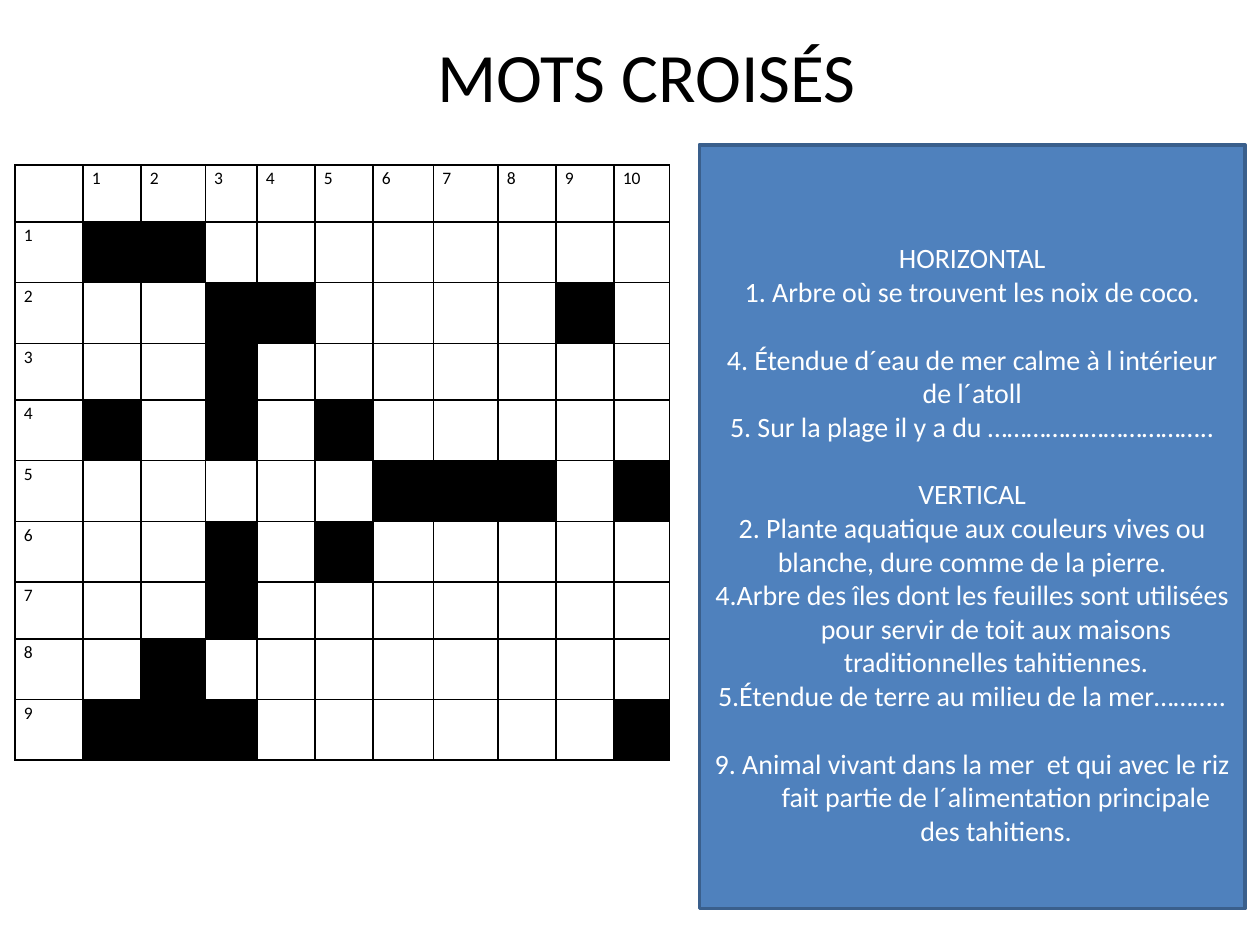
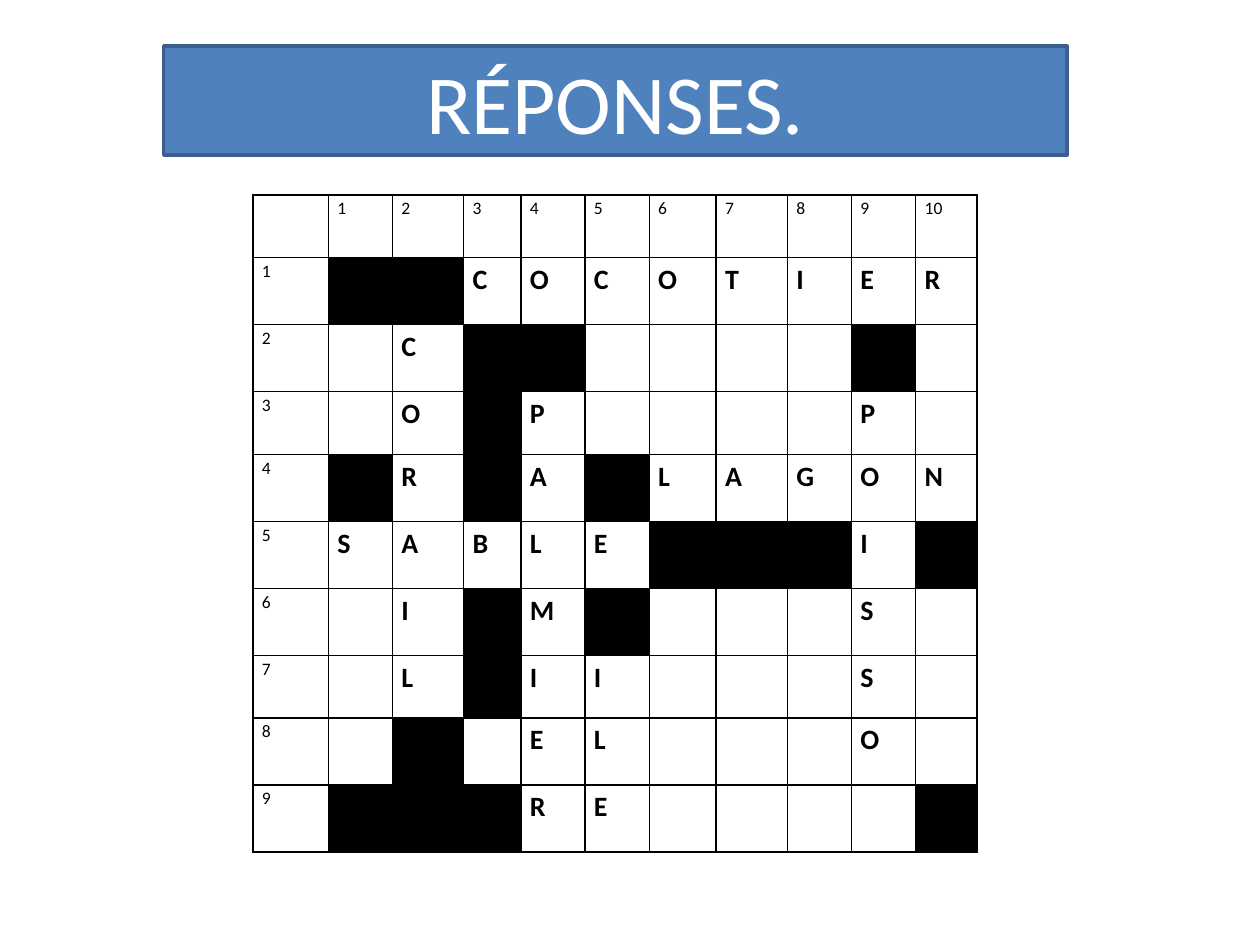
from dataclasses import dataclass

from lxml import etree
from pptx import Presentation
from pptx.dml.color import RGBColor
from pptx.enum.shapes import MSO_SHAPE
from pptx.enum.text import MSO_ANCHOR, MSO_AUTO_SIZE, PP_ALIGN
from pptx.oxml.ns import qn
from pptx.util import Cm, Pt

RECT = MSO_SHAPE.RECTANGLE
MIDDLE = MSO_ANCHOR.MIDDLE
CENTER = PP_ALIGN.CENTER
FIXED = MSO_AUTO_SIZE.NONE
TITLE_ONLY = 5


@dataclass(frozen=True)
class Theme:
    font: str = "Calibri"
    ink: str = "000000"
    paper: str = "FFFFFF"
    panel: str = "4F81BD"
    edge: str = "3A5F8C"
    title: float = 39.6
    banner: float = 48
    clue: float = 16
    letter: float = 16
    number: float = 10
    edge_width: float = 2
    rule: float = 1


THEME = Theme()

# One string per row: "#" is a black square, "." an empty one.
ANSWERS = [
    "##COCOTIER",
    ".C##....#.",
    ".O#P....P.",
    "#R#A#LAGON",
    "SABLE###I#",
    ".I#M#...S.",
    ".L#II...S.",
    ".#.EL...O.",
    "###RE....#",
]
COLS = [54, 46, 51, 41, 46, 46, 48, 51, 46, 46, 44]
ROWS = [45, 48, 48, 45, 48, 48, 48, 45, 48, 48]

LINE = Pt(19.5)  # one line of clue text
HANG = Cm(0.96)

# Text, lines left free above, hanging indent
CLUES = [
    ("HORIZONTAL", 0, False),
    ("1. Arbre où se trouvent les noix de coco.", 0, False),
    ("4. Étendue d´eau de mer calme à l intérieur de l´atoll", 1, False),
    ("5. Sur la plage il y a du ……………………………..", 0, False),
    ("VERTICAL", 1, False),
    ("2. Plante aquatique aux couleurs vives ou blanche, "
     "dure comme de la pierre.", 0, False),
    ("4.Arbre des îles dont les feuilles sont utilisées pour servir "
     "de toit aux maisons traditionnelles tahitiennes.", 0, True),
    ("5.Étendue de terre au milieu de la mer………..", 0, True),
    ("9. Animal vivant dans la mer  et qui avec le riz fait partie "
     "de l´alimentation principale des tahitiens.", 1, True),
]


def color(code):
    return RGBColor.from_string(code)


def style(par, size, code, bold=False):
    font = par.font
    font.name, font.size, font.bold = THEME.font, Pt(size), bold
    font.color.rgb = color(code)


def paint(shape):
    """Give a shape the blue fill and darker edge."""
    shape.fill.solid()
    shape.fill.fore_color.rgb = color(THEME.panel)
    shape.line.color.rgb = color(THEME.edge)
    shape.line.width = Pt(THEME.edge_width)


def add_title(slide, box, text, size, code):
    title = slide.shapes.title
    title.left, title.top, title.width, title.height = map(Cm, box)
    frame = title.text_frame
    frame.text = text
    frame.auto_size = FIXED
    frame.vertical_anchor = MIDDLE
    frame.margin_top = frame.margin_bottom = 0
    par = frame.paragraphs[0]
    par.alignment = CENTER
    style(par, size, code)
    return title


def add_clues(slide, box):
    panel = slide.shapes.add_shape(RECT, *map(Cm, box))
    panel.shadow.inherit = False
    paint(panel)
    frame = panel.text_frame
    frame.word_wrap = True
    frame.vertical_anchor = MIDDLE
    frame.margin_top += LINE
    for i, (text, gap, hang) in enumerate(CLUES):
        par = frame.add_paragraph() if i else frame.paragraphs[0]
        par.text = text
        par.alignment = CENTER
        if gap:
            par.space_before = gap * LINE
        if hang:
            props = par._p.get_or_add_pPr()
            props.set("marL", str(HANG))
            props.set("indent", str(-HANG))
        style(par, THEME.clue, THEME.paper)


def rule_cell(cell):
    """Draw the four borders of a cell."""
    props = cell._tc.get_or_add_tcPr()
    for side in ("lnL", "lnR", "lnT", "lnB"):
        line = etree.SubElement(props, qn(f"a:{side}"), w=str(Pt(THEME.rule)))
        fill = etree.SubElement(line, qn("a:solidFill"))
        etree.SubElement(fill, qn("a:srgbClr"), val=THEME.ink)


def fill_cell(cell, mark, head, solved):
    rule_cell(cell)
    if mark == "#":
        cell.fill.solid()
        cell.fill.fore_color.rgb = color(THEME.ink)
    else:
        cell.fill.background()
    cell.margin_left = cell.margin_right = Cm(0.18)
    cell.margin_top = cell.margin_bottom = 0
    par = cell.text_frame.paragraphs[0]
    par.line_spacing = 1.15
    if head or (solved and mark.isalpha()):
        par.text = mark
    size = THEME.number if head else THEME.letter
    style(par, size, THEME.ink, bold=not head)


def add_grid(slide, box, solved):
    left, top, width, height = map(Cm, box)
    table = slide.shapes.add_table(
        len(ROWS), len(COLS), left, top, width, height).table
    table.first_row = table.horz_banding = False
    for col, part in zip(table.columns, COLS):
        col.width = int(width * part / sum(COLS))
    for row, part in zip(table.rows, ROWS):
        row.height = int(height * part / sum(ROWS))
    marks = [["", *map(str, range(1, len(COLS)))]]
    marks += [[str(n), *line] for n, line in enumerate(ANSWERS, 1)]
    for r, line in enumerate(marks):
        for c, mark in enumerate(line):
            fill_cell(table.cell(r, c), mark, r == 0 or c == 0, solved)


def add_puzzle(deck):
    slide = deck.slides.add_slide(deck.slide_layouts[TITLE_ONLY])
    add_title(slide, (3.91, 0.74, 18.24, 1.55), "MOTS CROISÉS",
              THEME.title, THEME.ink)
    add_clues(slide, (14.1, 2.92, 11, 15.4))
    add_grid(slide, (0.3, 3.33, 13.2, 12), solved=False)


def add_answers(deck):
    slide = deck.slides.add_slide(deck.slide_layouts[TITLE_ONLY])
    banner = add_title(slide, (3.3, 0.93, 18.21, 2.2), "RÉPONSES.",
                       THEME.banner, THEME.paper)
    paint(banner)
    add_grid(slide, (5.1, 3.93, 14.6, 13.25), solved=True)


def main():
    deck = Presentation()
    deck.slide_width, deck.slide_height = Cm(25.4), Cm(19.05)
    add_puzzle(deck)
    add_answers(deck)
    deck.save("out.pptx")


if __name__ == "__main__":
    main()
